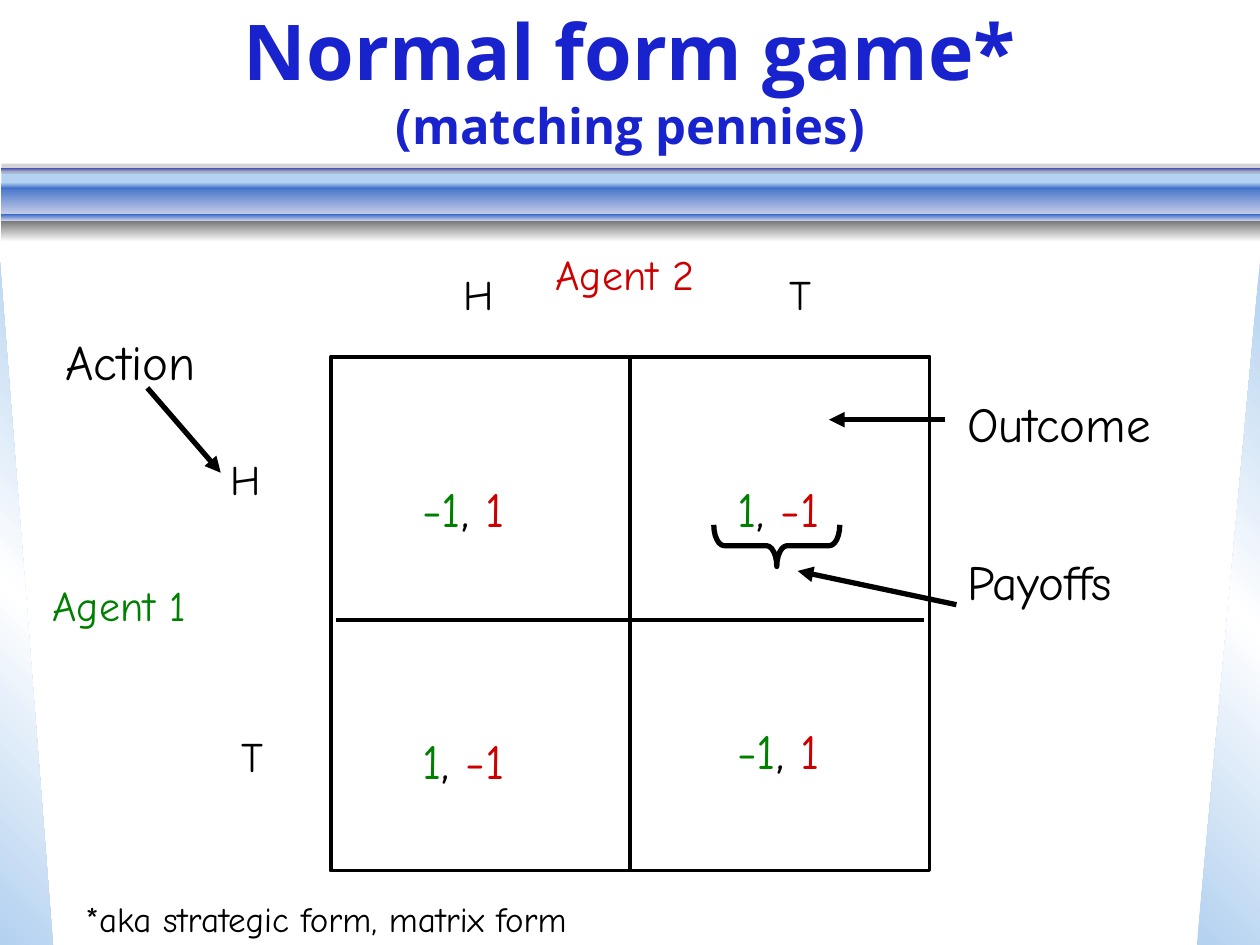
"""Build a slide that explains a normal form game with matching pennies."""
from dataclasses import dataclass

import pptx
import pptx.dml.color
import pptx.enum.dml
import pptx.enum.shapes
import pptx.enum.text
import pptx.oxml
import pptx.oxml.ns
import pptx.util
from lxml import etree

Cm = pptx.util.Cm
Pt = pptx.util.Pt
SHAPE = pptx.enum.shapes.MSO_SHAPE
qn = pptx.oxml.ns.qn


@dataclass(frozen=True)
class Theme:
    heading_font: str = "Open Sans"
    body_font: str = "Comic Neue"
    heading: str = "1822CD"
    ink: str = "000000"
    agent_1: str = "008000"
    agent_2: str = "CC0000"
    sky: str = "B3D1F0"
    blue: str = "3568C7"
    mist: str = "CAD0E9"
    lilac: str = "BABBE7"
    shade: str = "777777"
    white: str = "FFFFFF"
    title_size: int = 44
    large_size: int = 28
    label_size: int = 24
    note_size: int = 20
    grid_width: float = 2.25
    arrow_width: float = 3


def rgb(color):
    return pptx.dml.color.RGBColor.from_string(color)


def write(paragraph, text, *, font, size, color, bold=False):
    run = paragraph.add_run()
    run.text = text
    run.font.name = font
    run.font.size = Pt(size)
    run.font.bold = bold
    run.font.color.rgb = rgb(color)


class GameSlide:
    def __init__(self, slide, theme):
        self.slide = slide
        self.theme = theme

    def title(self, heading, subheading):
        t = self.theme
        title = self.slide.shapes.title
        title.left, title.top, title.width, title.height = Cm(1.91), 0, Cm(21.59), Cm(3.18)
        frame = title.text_frame
        frame.auto_size = pptx.enum.text.MSO_AUTO_SIZE.NONE
        frame.vertical_anchor = pptx.enum.text.MSO_ANCHOR.MIDDLE
        lines = frame.paragraphs[0]
        lines.alignment = pptx.enum.text.PP_ALIGN.CENTER
        style = {"font": t.heading_font, "color": t.heading, "bold": True}
        write(lines, heading, size=t.title_size, **style)
        lines.add_line_break()
        write(lines, subheading, size=t.large_size, **style)

    def shape(self, kind, left, top, width, height, colors=(), angle=90, alpha=None):
        shape = self.slide.shapes.add_shape(kind, Cm(left), Cm(top), Cm(width), Cm(height))
        shape.shadow.inherit = False
        shape.line.fill.background()
        if not colors:
            shape.fill.background()
        elif len(colors) == 1:
            shape.fill.solid()
            shape.fill.fore_color.rgb = rgb(colors[0])
        else:
            self.gradient(shape, colors, angle)
        if alpha is not None:
            color = shape._element.spPr.find(f"{qn('a:solidFill')}/{qn('a:srgbClr')}")
            etree.SubElement(color, qn("a:alpha"), val=str(alpha * 1000))
        return shape

    def gradient(self, shape, colors, angle):
        step = 100000 // (len(colors) - 1)
        stops = "".join(
            f'<a:gs pos="{i * step}"><a:srgbClr val="{color}"/></a:gs>'
            for i, color in enumerate(colors)
        )
        fill = pptx.oxml.parse_xml(
            f'<a:gradFill {pptx.oxml.ns.nsdecls("a")} rotWithShape="1"><a:gsLst>{stops}</a:gsLst>'
            f'<a:lin ang="{angle * 60000}" scaled="0"/></a:gradFill>'
        )
        shape._element.spPr.find(qn("a:prstGeom")).addnext(fill)

    def outline(self, shape, width):
        shape.line.color.rgb = rgb(self.theme.ink)
        shape.line.width = Pt(width)

    def line(self, start, end, width, arrow=False):
        line = self.slide.shapes.add_connector(
            pptx.enum.shapes.MSO_CONNECTOR.STRAIGHT, *map(Cm, start + end)
        )
        self.outline(line, width)
        if arrow:
            etree.SubElement(line.line._get_or_add_ln(), qn("a:tailEnd"), type="triangle")
        etree.SubElement(line._element.spPr, qn("a:effectLst"))
        return line

    def text(self, parts, left, top, width, height, size, wrap=True):
        box = self.slide.shapes.add_textbox(Cm(left), Cm(top), Cm(width), Cm(height))
        frame = box.text_frame
        frame.word_wrap = wrap
        frame.auto_size = pptx.enum.text.MSO_AUTO_SIZE.SHAPE_TO_FIT_TEXT
        for text, color in parts:
            write(frame.paragraphs[0], text, font=self.theme.body_font, size=size, color=color)


def draw_backdrop(page):
    t = page.theme
    side = (t.sky, t.white, t.sky)
    page.shape(SHAPE.RIGHT_TRIANGLE, 0, 5.28, 1.07, 13.77, side, angle=315)
    right = page.shape(SHAPE.RIGHT_TRIANGLE, 24.13, 5.28, 1.27, 13.77, side, angle=45)
    right._element.spPr.find(qn("a:xfrm")).set("flipH", "1")
    for top, height, colors, alpha in (
        (3.45, 0.25, (t.sky,), None),
        (3.71, 0.63, (t.blue, t.mist), None),
        (3.38, 0.08, (t.heading, t.lilac), None),
        (4.32, 0.13, (t.blue, t.mist), None),
        (3.68, 0.13, (t.sky, t.blue), None),
        (4.45, 0.43, (t.shade, t.white), None),
        (3.3, 0.2, (t.shade,), 31),
    ):
        page.shape(SHAPE.RECTANGLE, 0.03, top, 25.37, height, colors, alpha=alpha)


def draw_matrix(page):
    t = page.theme
    matrix = page.shape(SHAPE.RECTANGLE, 6.67, 7.19, 12.07, 10.36)
    page.outline(matrix, t.grid_width)
    page.line((6.78, 12.5), (18.62, 12.5), t.grid_width)
    column_divider = page.line((12.7, 7.19), (12.7, 17.55), t.grid_width)
    column_divider.begin_connect(matrix, 0)
    column_divider.end_connect(matrix, 2)
    for text, color, left, top, width, wrap in (
        ("Agent 1", t.agent_1, 0.81, 11.56, 3.53, False),
        ("Agent 2", t.agent_2, 10.95, 4.88, 3.66, False),
        ("H", t.ink, 4.39, 9.02, 3.23, True),
        ("H", t.ink, 9.09, 5.28, 1.17, False),
        ("T", t.ink, 4.62, 14.61, 1.09, False),
        ("T", t.ink, 15.67, 5.28, 1.09, False),
    ):
        page.text([(text, color)], left, top, width, 1.27, t.label_size, wrap)
    for first, second, left, top in (
        ("-1", "1", 8.26, 9.53),
        ("-1", "1", 14.61, 14.4),
        ("1", "-1", 14.61, 9.53),
        ("1", "-1", 8.26, 14.61),
    ):
        payoffs = [(first, t.agent_1), (", ", t.ink), (second, t.agent_2)]
        page.text(payoffs, left, top, 2.54, 1.45, t.large_size)


def draw_callouts(page):
    t = page.theme
    for text, left, top, width, start, end in (
        ("Action", 1.07, 6.55, 4.45, (2.97, 7.82), (4.45, 9.53)),
        ("Outcome", 19.25, 7.8, 6.15, (19.05, 8.46), (16.71, 8.46)),
        ("Payoffs", 19.25, 11, 6.15, (19.28, 12.19), (16.08, 11.51)),
    ):
        page.text([(text, t.ink)], left, top, width, 1.45, t.large_size)
        page.line(start, end, t.arrow_width, arrow=True)
    brace = page.shape(SHAPE.LEFT_BRACE, 15.24, 9.73, 0.84, 2.54)
    brace.adjustments[0] = 0.25
    brace.rotation = 270
    page.outline(brace, t.arrow_width)
    page.text([("*aka strategic form, matrix form", t.ink)], 1.47, 17.96, 19.25, 1.09, t.note_size)


def main():
    deck = pptx.Presentation()
    deck.slide_width, deck.slide_height = Cm(25.4), Cm(19.05)
    page = GameSlide(deck.slides.add_slide(deck.slide_layouts[5]), Theme())
    draw_backdrop(page)
    page.title("Normal form game*", "(matching pennies)")
    draw_matrix(page)
    draw_callouts(page)
    deck.save("out.pptx")


if __name__ == "__main__":
    main()
